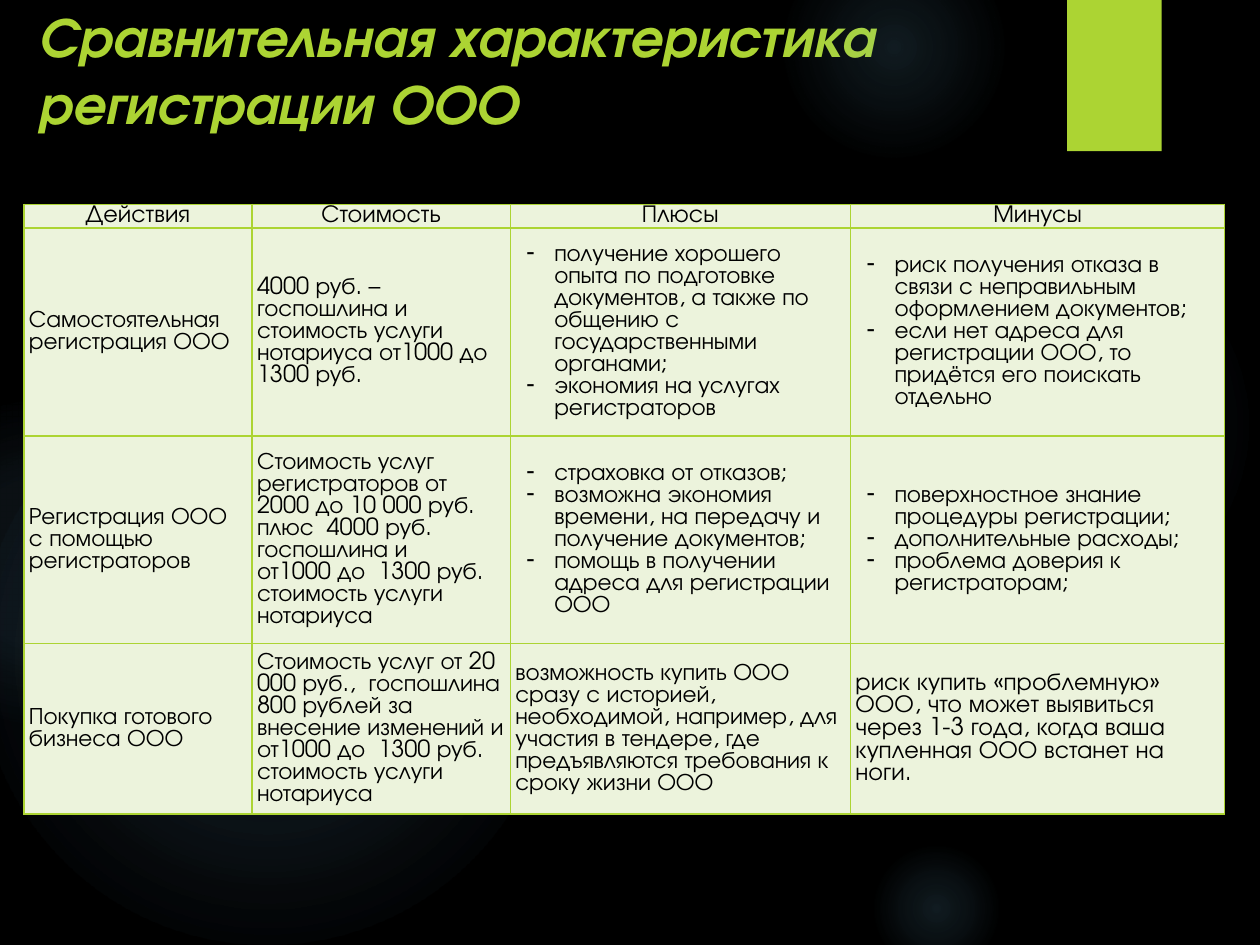
from lxml import etree
from pptx import Presentation
from pptx.dml.color import RGBColor
from pptx.enum import shapes, text
from pptx.oxml import parse_xml
from pptx.oxml.ns import nsdecls, qn
from pptx.util import Inches, Pt

FONT = "TeX Gyre Adventor"
BLACK = RGBColor(0, 0, 0)
LIME = RGBColor(0xAC, 0xD4, 0x33)
PALE = RGBColor(0xEC, 0xF3, 0xDC)
GLOW = RGBColor(0x7A, 0xC4, 0xF0)
PLAIN = "{2D5ABB26-0587-4C30-8999-92F81FD0307C}"
NBSP = chr(160)
FEE = f"от1000{NBSP}до{NBSP} 1300 руб."

ORBS = [
    (6.89, 1.83, 3.08, 7, 6, 69),
    (6.22, -0.5, 1.75, 14, 7, 73),
    (6.89, 6.67, 1.08, 14, 7, 66),
    (-0.17, 2.92, 4.58, 11, 10, 75),
    (-0.92, 3.17, 2.58, 8, 8, 72),
]
COLS = [1.81, 2.05, 2.7, 2.97]
ROWS = [0.19, 1.65, 1.65, 1.35]
HEAD = ["Действия", "Стоимость", "Плюсы", "Минусы"]
BODY = [
    ["Самостоятельная регистрация ООО",
     "4000 руб. – госпошлина и\n"
     f"стоимость услуги нотариуса {FEE}",
     ["получение хорошего опыта по подготовке документов, а также по "
      "общению с государственными органами;",
      "экономия на услугах регистраторов"],
     ["риск получения отказа в связи с неправильным оформлением документов;",
      "если нет адреса для регистрации ООО, то придётся его поискать отдельно"]],
    ["Регистрация ООО с помощью регистраторов",
     f"Стоимость услуг регистраторов от 2000 до 10 000 руб. плюс{NBSP} 4000 руб.  "
     f"госпошлина и {FEE}  стоимость услуги нотариуса",
     ["страховка от отказов;",
      "возможна экономия времени, на передачу и получение документов;",
      "помощь в получении адреса для регистрации ООО"],
     ["поверхностное знание процедуры регистрации;",
      "дополнительные расходы;",
      "проблема доверия к регистраторам;"]],
    ["Покупка готового бизнеса ООО",
     "Стоимость услуг от 20 000 руб.,  госпошлина 800 рублей за внесение "
     f"изменений и {FEE}  стоимость услуги нотариуса",
     "возможность купить ООО сразу с историей, необходимой, например, для "
     "участия в тендере, где предъявляются требования к сроку жизни ООО",
     "риск купить «проблемную» ООО, что может выявиться через 1-3 года, "
     "когда ваша купленная ООО встанет на ноги."],
]


def add_shape(slide, kind, left, top, wide, high):
    shape = slide.shapes.add_shape(
        kind, Inches(left), Inches(top), Inches(wide), Inches(high))
    shape.shadow.inherit = False
    shape.line.fill.background()
    return shape


def add_orb(slide, left, top, size, core, mid, edge):
    orb = add_shape(slide, shapes.MSO_SHAPE.OVAL, left, top, size, size)
    stops = "".join(
        f'<a:gs pos="{pos * 1000}"><a:srgbClr val="{GLOW}">'
        f'<a:alpha val="{alpha * 1000}"/></a:srgbClr></a:gs>'
        for pos, alpha in ((0, core), (36, mid), (edge, 0)))
    fill = parse_xml(
        f'<a:gradFill {nsdecls("a")}><a:gsLst>{stops}</a:gsLst>'
        '<a:path path="circle"><a:fillToRect l="50000" t="50000" '
        'r="50000" b="50000"/></a:path></a:gradFill>')
    orb._element.spPr.find(qn("a:prstGeom")).addnext(fill)


def add_decor(slide):
    slide.background.fill.solid()
    slide.background.fill.fore_color.rgb = BLACK
    for orb in ORBS:
        add_orb(slide, *orb)
    tab = add_shape(slide, shapes.MSO_SHAPE.RECTANGLE, 8.47, 0, 0.75, 1.2)
    tab.fill.solid()
    tab.fill.fore_color.rgb = LIME


def set_font(para, size, color):
    para.font.name = FONT
    para.font.size = Pt(size)
    para.font.color.rgb = color


def add_title(slide, left, top, wide, high):
    title = slide.shapes.title
    title.left, title.top = Inches(left), Inches(top)
    title.width, title.height = Inches(wide), Inches(high)
    frame = title.text_frame
    frame.text = "Сравнительная характеристика регистрации ООО"
    frame.auto_size = text.MSO_AUTO_SIZE.NONE
    frame.vertical_anchor = text.MSO_ANCHOR.TOP
    para = frame.paragraphs[0]
    para.alignment = text.PP_ALIGN.LEFT
    set_font(para, 32, LIME)
    para.font.bold = para.font.italic = True


def add_dash(para):
    props = para._p.get_or_add_pPr()
    props.set("marL", str(Inches(0.31)))
    props.set("indent", str(Inches(-0.22)))
    dash = etree.Element(qn("a:buChar"), char="-")
    props.find(qn("a:lnSpc")).addnext(dash)


def add_edges(cell):
    props = cell._tc.get_or_add_tcPr()
    for spot, side in enumerate("LRTB"):
        props.insert(spot, parse_xml(
            f'<a:ln{side} {nsdecls("a")} w="{Pt(0.75)}"><a:solidFill>'
            f'<a:srgbClr val="{LIME}"/></a:solidFill></a:ln{side}>'))


def fill_cell(cell, value, size, align):
    cell.fill.solid()
    cell.fill.fore_color.rgb = PALE
    cell.margin_left = cell.margin_right = Inches(0.04)
    cell.margin_top = cell.margin_bottom = 0
    cell.vertical_anchor = text.MSO_ANCHOR.MIDDLE
    add_edges(cell)
    listed = isinstance(value, list)
    cell.text_frame.text = "\n".join(value) if listed else value
    for para in cell.text_frame.paragraphs:
        para.alignment = align
        para.line_spacing = 1.0
        set_font(para, size, BLACK)
        if listed:
            add_dash(para)


def add_grid(slide, left, top):
    table = slide.shapes.add_table(
        len(ROWS), len(COLS), Inches(left), Inches(top),
        Inches(sum(COLS)), Inches(sum(ROWS))).table
    table._tbl.tblPr.find(qn("a:tableStyleId")).text = PLAIN
    for col, wide in zip(table.columns, COLS):
        col.width = Inches(wide)
    for row, high in zip(table.rows, ROWS):
        row.height = Inches(high)
    last = len(ROWS) - 1, len(COLS) - 1
    for r, line in enumerate([HEAD] + BODY):
        for c, value in enumerate(line):
            size = 14 if r == 0 or (r, c) == last else 13.5
            align = text.PP_ALIGN.LEFT if r else text.PP_ALIGN.CENTER
            fill_cell(table.cell(r, c), value, size, align)


def main():
    deck = Presentation()
    deck.slide_width, deck.slide_height = Inches(10), Inches(7.5)
    slide = deck.slides.add_slide(deck.slide_layouts[5])
    add_decor(slide)
    add_title(slide, 0.2, -0.04, 8.27, 0.87)
    add_grid(slide, 0.19, 1.62)
    deck.save("out.pptx")


if __name__ == "__main__":
    main()
